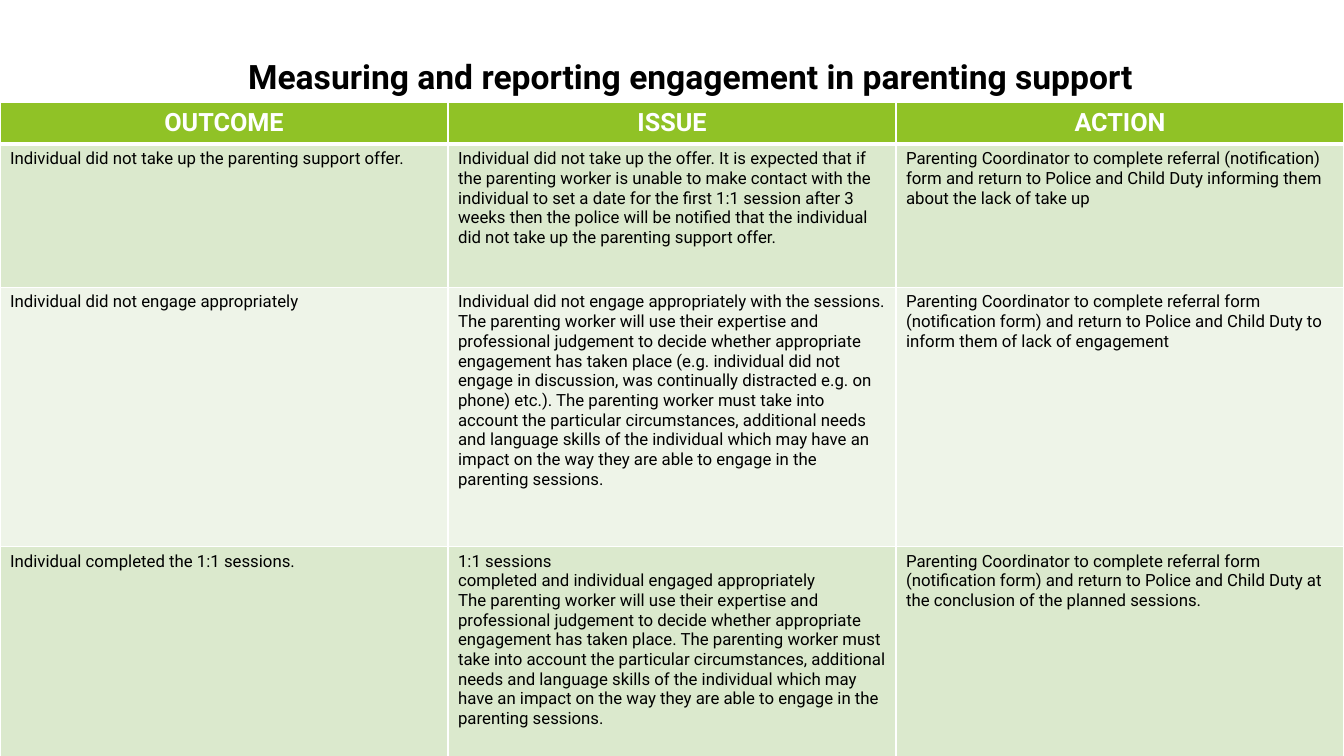
import pptx
import pptx.dml.color
import pptx.enum.text
import pptx.oxml
import pptx.oxml.ns
import pptx.util
from dataclasses import dataclass


@dataclass(frozen=True)
class Theme:
    font: str = "Roboto"
    ink: str = "000000"
    paper: str = "FFFFFF"
    header: str = "90C226"
    bands: tuple = ("DBE9CD", "EEF4E8")
    title_size: int = 24
    header_size: int = 18
    body_size: int = 12
    thin_rule: int = 1
    thick_rule: int = 3


TITLE = "Measuring and reporting engagement in parenting support"
HEADINGS = ("OUTCOME", "ISSUE", "ACTION")
OUTCOMES = (
    (
        "Individual did not take up the parenting support offer.",
        "Individual did not take up the offer. It is expected that if the parenting worker "
        "is unable to make contact with the individual to set a date for the first 1:1 session "
        "after 3 weeks then the police will be notified that the individual did not take up "
        "the parenting support offer.",
        "Parenting Coordinator to complete referral (notification) form and return to Police "
        "and Child Duty informing them about the lack of take up",
    ),
    (
        "Individual did not engage appropriately",
        "Individual did not engage appropriately with the sessions. The parenting worker will "
        "use their expertise and professional judgement to decide whether appropriate "
        "engagement has taken place (e.g. individual did not engage in discussion, was "
        "continually distracted e.g. on phone) etc.). The parenting worker must take into "
        "account the particular circumstances, additional needs and language skills of the "
        "individual which may have an impact on the way they are able to engage in the "
        "parenting sessions.",
        "Parenting Coordinator to complete referral form (notification form) and return to "
        "Police and Child Duty to inform them of lack of engagement",
    ),
    (
        "Individual completed the 1:1 sessions.",
        "1:1 sessions\n"
        "completed and individual engaged appropriately\n"
        "The parenting worker will use their expertise and professional judgement to decide "
        "whether appropriate engagement has taken place. The parenting worker must take into "
        "account the particular circumstances, additional needs and language skills of the "
        "individual which may have an impact on the way they are able to engage in the "
        "parenting sessions.",
        "Parenting Coordinator to complete referral form (notification form) and return to "
        "Police and Child Duty at the conclusion of the planned sessions.",
    ),
)
ROW_PERCENTS = (5.47, 18.93, 34.27, 30.27)


class SlideBuilder:
    """Draws styled elements on one slide, with lengths in percent of its size."""

    def __init__(self, presentation, theme):
        self.theme = theme
        self.width = presentation.slide_width
        self.height = presentation.slide_height
        self.slide = presentation.slides.add_slide(presentation.slide_layouts[6])

    def across(self, percent):
        return round(self.width * percent / 100)

    def down(self, percent):
        return round(self.height * percent / 100)

    def box(self, left, top, width, height):
        return self.across(left), self.down(top), self.across(width), self.down(height)

    def text(self, frame, content, size, color, bold=False, centred=False):
        frame.word_wrap = True
        for index, line in enumerate(content.split("\n")):
            paragraph = frame.add_paragraph() if index else frame.paragraphs[0]
            if centred:
                paragraph.alignment = pptx.enum.text.PP_ALIGN.CENTER
            run = paragraph.add_run()
            run.text = line
            run.font.name = self.theme.font
            run.font.size = pptx.util.Pt(size)
            run.font.bold = bold
            run.font.color.rgb = pptx.dml.color.RGBColor.from_string(color)

    def title(self, content, left, top, width, height):
        shape = self.slide.shapes.add_textbox(*self.box(left, top, width, height))
        self.text(shape.text_frame, content, self.theme.title_size, self.theme.ink, True, True)
        shape.text_frame.auto_size = pptx.enum.text.MSO_AUTO_SIZE.SHAPE_TO_FIT_TEXT

    def borders(self, cell, top, bottom):
        properties = cell._tc.get_or_add_tcPr()
        thin = self.theme.thin_rule
        for side, points in (("L", thin), ("R", thin), ("T", top), ("B", bottom)):
            properties.append(pptx.oxml.parse_xml(
                f'<a:ln{side} {pptx.oxml.ns.nsdecls("a")} w="{pptx.util.Pt(points)}">'
                f'<a:solidFill><a:srgbClr val="{self.theme.paper}"/></a:solidFill></a:ln{side}>'
            ))

    def table(self, headings, body, top, row_percents):
        theme = self.theme
        rows = (headings, *body)
        frame = self.slide.shapes.add_table(
            len(rows), len(headings), *self.box(0, top, 100, sum(row_percents)))
        table = frame.table
        for row_index, (contents, percent) in enumerate(zip(rows, row_percents)):
            table.rows[row_index].height = self.down(percent)
            heading = row_index == 0
            fill = theme.header if heading else theme.bands[(row_index - 1) % 2]
            size = theme.header_size if heading else theme.body_size
            color = theme.paper if heading else theme.ink
            above = theme.thick_rule if row_index == 1 else theme.thin_rule
            below = theme.thick_rule if heading else theme.thin_rule
            for column_index, content in enumerate(contents):
                cell = table.cell(row_index, column_index)
                self.borders(cell, above, below)
                cell.fill.solid()
                cell.fill.fore_color.rgb = pptx.dml.color.RGBColor.from_string(fill)
                self.text(cell.text_frame, content, size, color, heading, heading)


def main():
    presentation = pptx.Presentation()
    presentation.slide_width = pptx.util.Inches(13.33)
    presentation.slide_height = pptx.util.Inches(7.5)
    builder = SlideBuilder(presentation, Theme())
    builder.table(HEADINGS, OUTCOMES, 13.6, ROW_PERCENTS)
    builder.title(TITLE, 10.58, 6.8, 81.6, 6.67)
    presentation.save("out.pptx")


if __name__ == "__main__":
    main()
